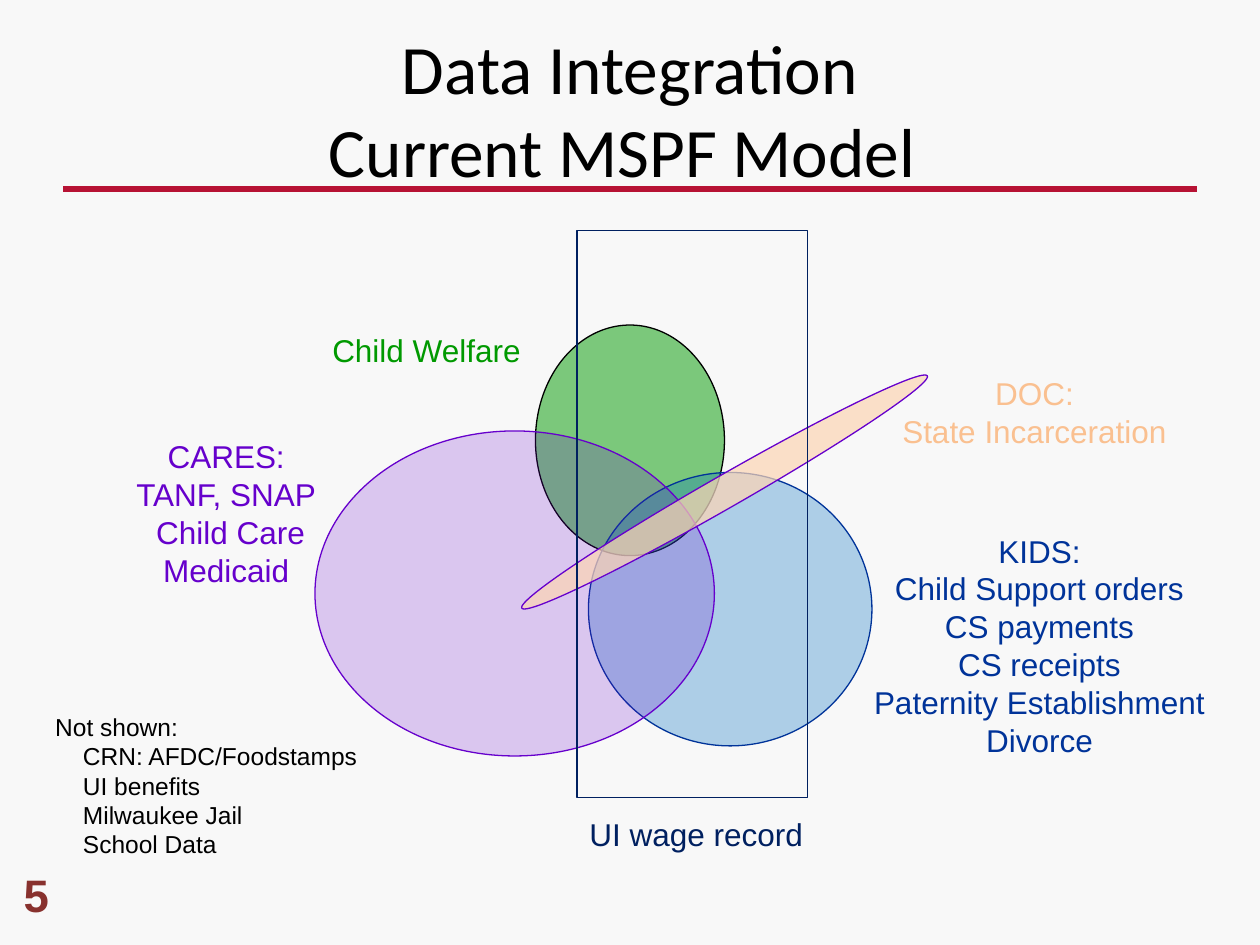
from lxml import etree
from pptx import Presentation
from pptx.dml.color import RGBColor
from pptx.enum.shapes import MSO_CONNECTOR, MSO_SHAPE
from pptx.enum.text import MSO_ANCHOR, MSO_AUTO_SIZE, PP_ALIGN
from pptx.oxml.ns import qn
from pptx.util import Inches, Pt

ELLIPSE = MSO_SHAPE.OVAL
RECTANGLE = MSO_SHAPE.RECTANGLE
STRAIGHT = MSO_CONNECTOR.STRAIGHT
LEFT, CENTER = PP_ALIGN.LEFT, PP_ALIGN.CENTER
TOP, MIDDLE, BOTTOM = MSO_ANCHOR.TOP, MSO_ANCHOR.MIDDLE, MSO_ANCHOR.BOTTOM
NO_AUTOFIT = MSO_AUTO_SIZE.NONE

COLORS = {
    "background": "F8F8F8",
    "rule": "B71234",
    "number": "88312E",
    "black": "000000",
    "welfare": "009900",
    "kids_fill": "0070C0",
    "kids": "003399",
    "cares": "6600CC",
    "incarceration": "FAC090",
    "incarceration_fill": "FCD5B5",
    "wages": "002060",
}


def rgb(name):
    return RGBColor.from_string(COLORS[name])


class VennSlide:
    body_font = "Arial"
    title_font = "Calibri"
    outline = Pt(0.75)
    indent = Inches(0.22)

    def __init__(self, presentation):
        self.slide = presentation.slides.add_slide(presentation.slide_layouts[5])
        fill = self.slide.background.fill
        fill.solid()
        fill.fore_color.rgb = rgb("background")

    def format_text(self, text_frame, font, size, color, align, anchor, bold=False):
        text_frame.word_wrap = True
        text_frame.auto_size = NO_AUTOFIT
        text_frame.vertical_anchor = anchor
        for paragraph in text_frame.paragraphs:
            paragraph.alignment = align
            for run in paragraph.runs:
                run.font.name = font
                run.font.size = Pt(size)
                run.font.bold = bold
                run.font.color.rgb = rgb(color)

    def title(self, text, left, top, width, height):
        shape = self.slide.shapes.title
        shape.left, shape.top = Inches(left), Inches(top)
        shape.width, shape.height = Inches(width), Inches(height)
        shape.text_frame.text = text
        self.format_text(shape.text_frame, self.title_font, 39.6, "black", CENTER, MIDDLE)

    def rule(self, left, right, top):
        connector = self.slide.shapes.add_connector(
            STRAIGHT, Inches(left), Inches(top), Inches(right), Inches(top))
        connector.line.color.rgb = rgb("rule")
        connector.line.width = Pt(4)
        etree.SubElement(connector._element.spPr, qn("a:effectLst"))

    def region(self, kind, left, top, width, height, line, fill=None, opacity=100, rotation=0):
        shape = self.slide.shapes.add_shape(
            kind, Inches(left), Inches(top), Inches(width), Inches(height))
        shape.shadow.inherit = False
        shape.rotation = rotation
        shape.line.color.rgb = rgb(line)
        shape.line.width = self.outline
        if fill is None:
            shape.fill.background()
            return
        shape.fill.solid()
        shape.fill.fore_color.rgb = rgb(fill)
        color = shape._element.spPr.find(qn("a:solidFill"))[0]
        etree.SubElement(color, qn("a:alpha"), val=str(opacity * 1000))

    def label(self, lines, left, top, width, height, color, size=18, align=CENTER,
              anchor=TOP, bold=False, indent_rest=False):
        shape = self.slide.shapes.add_textbox(
            Inches(left), Inches(top), Inches(width), Inches(height))
        text_frame = shape.text_frame
        text_frame.text = "\n".join(lines)
        self.format_text(text_frame, self.body_font, size, color, align, anchor, bold)
        if indent_rest:
            for paragraph in text_frame.paragraphs[1:]:
                paragraph._p.get_or_add_pPr().set("marL", str(self.indent))


def main():
    presentation = Presentation()
    presentation.slide_width, presentation.slide_height = Inches(10), Inches(7.5)
    venn = VennSlide(presentation)

    venn.title("Data Integration\vCurrent MSPF Model ", 0.5, 0.3, 9, 1.12)
    venn.rule(0.5, 9.5, 1.5)
    venn.label(["5"], 0.09, 6.83, 0.64, 0.53, "number", size=26, align=LEFT,
               anchor=BOTTOM, bold=True)

    venn.region(ELLIPSE, 4.25, 2.58, 1.5, 1.83, "black", "welfare", 50)
    venn.region(ELLIPSE, 4.67, 3.75, 2.25, 2.17, "kids", "kids_fill", 30)
    venn.label(["Child Welfare "], 2.42, 2.58, 2, 0.4, "welfare")
    venn.label(["CARES:", "TANF, SNAP", " Child Care", "Medicaid"],
               0.67, 3.42, 2.25, 1.31, "cares")
    venn.label(["KIDS:", "Child Support orders", "CS payments", "CS receipts",
                "Paternity Establishment", "Divorce"],
               6.75, 4.17, 3, 1.92, "kids")
    venn.region(ELLIPSE, 2.5, 3.42, 3.17, 2.58, "cares", "cares", 20)
    venn.label(["DOC:", "State Incarceration"], 6.75, 2.92, 2.92, 0.71, "incarceration")
    venn.region(ELLIPSE, 5.62, 2.05, 0.26, 3.71, "cares", "incarceration_fill", 71, 60.2)
    venn.region(RECTANGLE, 4.58, 1.83, 1.83, 4.5, "wages")
    venn.label(["UI wage record"], 4.58, 6.42, 2.08, 0.4, "wages", align=LEFT)
    venn.label(["Not shown:", "CRN: AFDC/Foodstamps", "UI benefits", "Milwaukee Jail",
                "School Data"],
               0.34, 5.6, 2.67, 1.51, "black", size=14, align=LEFT, indent_rest=True)

    presentation.save("out.pptx")


if __name__ == "__main__":
    main()
